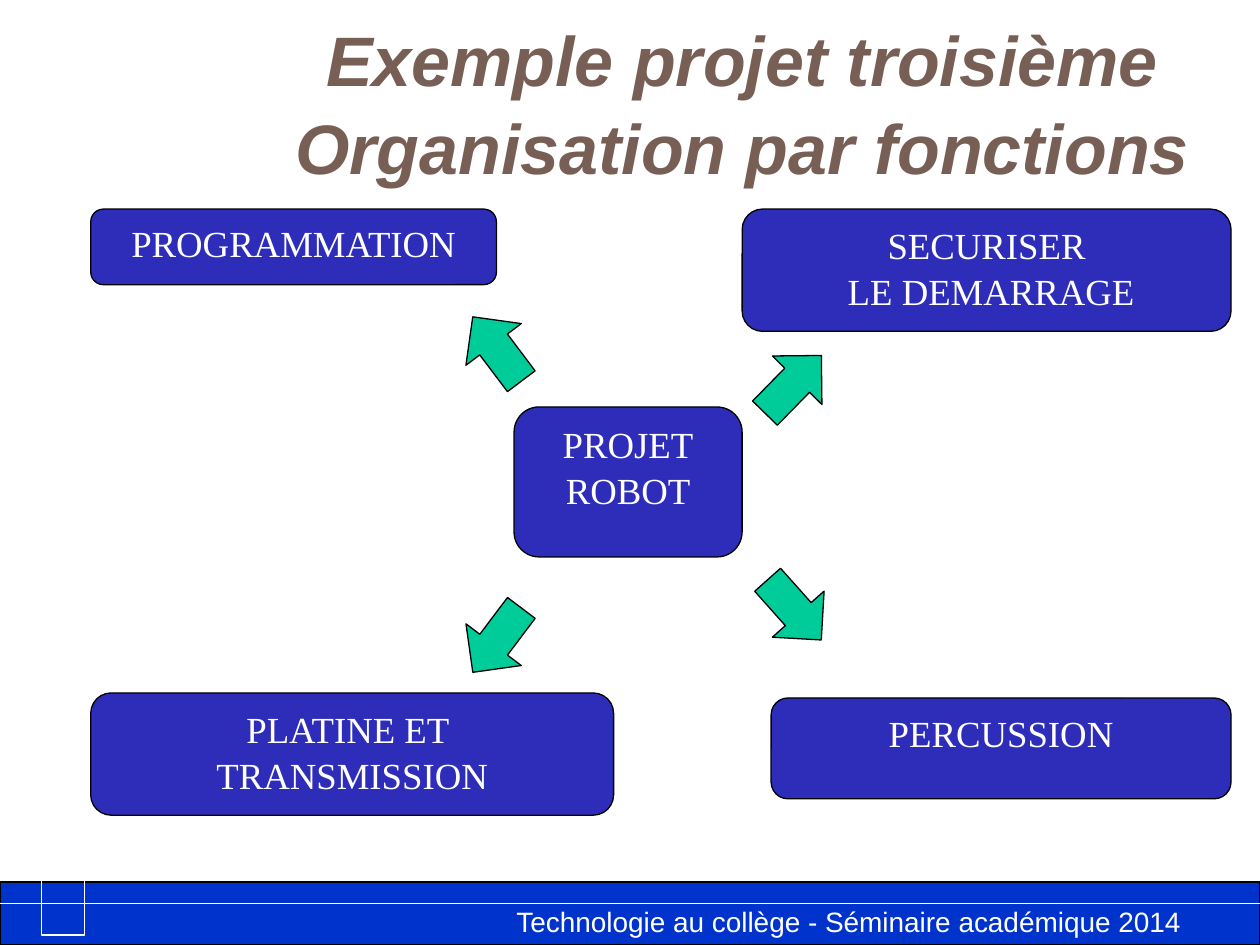
from lxml import etree
from pptx import Presentation, util as u
from pptx.dml.color import RGBColor
from pptx.enum import shapes, text
from pptx.oxml.ns import qn

BAND_BLUE = RGBColor(0x00, 0x33, 0xCC)
BOX_BLUE = RGBColor(0x2D, 0x2D, 0xB9)
ARROW_GREEN = RGBColor(0x00, 0xCC, 0x99)
TITLE_BROWN = RGBColor(0x77, 0x5F, 0x55)
BLACK = RGBColor(0, 0, 0)
WHITE = RGBColor(0xFF, 0xFF, 0xFF)

WIDTH, HEIGHT = 10, 7.5
BAND_TOP, RULE_TOP = 7, 7.17
LEFT, RIGHT, TOP = 0.72, 9.77, 1.66
ARROW_SIZE = 0.55, 0.64
LINE_SPACING = 1.04

TITLE = ["Exemple projet troisième", "Organisation par fonctions"]
FOOTER = "Technologie au collège - Séminaire académique 2014"
FUNCTIONS = [
    (["PROJET", "ROBOT"], (4.08, 3.23, 1.81, 1.19)),
    (["PROGRAMMATION"], (LEFT, TOP, 3.22, 0.6)),
    (["SECURISER", " LE DEMARRAGE"], (RIGHT - 3.88, TOP, 3.88, 0.97)),
    (["PLATINE ET ", "TRANSMISSION"], (LEFT, 5.5, 4.15, 0.97)),
    (["PERCUSSION"], (RIGHT - 3.65, 5.54, 3.65, 0.8)),
]
ARROWS = [(3.67, 2.45, 323), (6.02, 2.73, 44.4), (3.67, 4.76, 217), (6.03, 4.52, 138.3)]


def inches(*lengths):
    return [u.Inches(length) for length in lengths]


def outline(shape, color):
    shape.line.color.rgb = color
    shape.line.width = u.Pt(0.75)


def add_filled(slide, kind, place, color):
    shape = slide.shapes.add_shape(kind, *inches(*place))
    shape.shadow.inherit = False
    shape.fill.solid()
    shape.fill.fore_color.rgb = color
    outline(shape, BLACK)
    return shape


def write(frame, lines, name, size, color, align, anchor):
    frame.word_wrap = True
    frame.vertical_anchor = anchor
    frame.text = "\n".join(lines)
    for paragraph in frame.paragraphs:
        paragraph.alignment = align
        paragraph.line_spacing = LINE_SPACING
        paragraph.font.name = name
        paragraph.font.size = u.Pt(size)
        paragraph.font.color.rgb = color


def add_band(slide):
    add_filled(slide, shapes.MSO_SHAPE.RECTANGLE,
               (0, BAND_TOP, WIDTH, HEIGHT - BAND_TOP), BAND_BLUE)
    rule = slide.shapes.add_connector(
        shapes.MSO_CONNECTOR.STRAIGHT, *inches(0, RULE_TOP, WIDTH, RULE_TOP))
    outline(rule, WHITE)
    etree.SubElement(rule._element.spPr, qn("a:effectLst"))

    footer = slide.shapes.add_textbox(*inches(4, 7.12, 6, 0.37))
    write(footer.text_frame, [FOOTER], "Arial", 16, WHITE,
          text.PP_ALIGN.LEFT, text.MSO_ANCHOR.TOP)

    start, *corners = [(0.67, 0.08), (0.67, 7.42), (0.33, 7.42), (0.33, 6.08)]
    builder = slide.shapes.build_freeform(*inches(*start), scale=1.0)
    builder.add_line_segments([inches(*corner) for corner in corners], close=False)
    bracket = builder.convert_to_shape()
    bracket.shadow.inherit = False
    bracket.fill.background()
    outline(bracket, WHITE)


def main():
    prs = Presentation()
    prs.slide_width, prs.slide_height = inches(WIDTH, HEIGHT)
    slide = prs.slides.add_slide(prs.slide_layouts[5])
    add_band(slide)

    title = slide.shapes.title
    title.left, title.top, title.width, title.height = inches(2.01, 0.21, 7.76, 1.18)
    write(title.text_frame, TITLE, "Arial", 40, TITLE_BROWN,
          text.PP_ALIGN.CENTER, text.MSO_ANCHOR.MIDDLE)
    title.text_frame.auto_size = text.MSO_AUTO_SIZE.NONE
    for paragraph in title.text_frame.paragraphs:
        paragraph.font.bold = paragraph.font.italic = True

    for lines, place in FUNCTIONS:
        box = add_filled(slide, shapes.MSO_SHAPE.ROUNDED_RECTANGLE, place, BOX_BLUE)
        write(box.text_frame, lines, "Times New Roman", 21, WHITE,
              text.PP_ALIGN.CENTER, text.MSO_ANCHOR.TOP)

    for left, top, angle in ARROWS:
        arrow = add_filled(slide, shapes.MSO_SHAPE.UP_ARROW,
                           (left, top, *ARROW_SIZE), ARROW_GREEN)
        arrow.rotation = angle

    prs.save("out.pptx")


if __name__ == "__main__":
    main()
